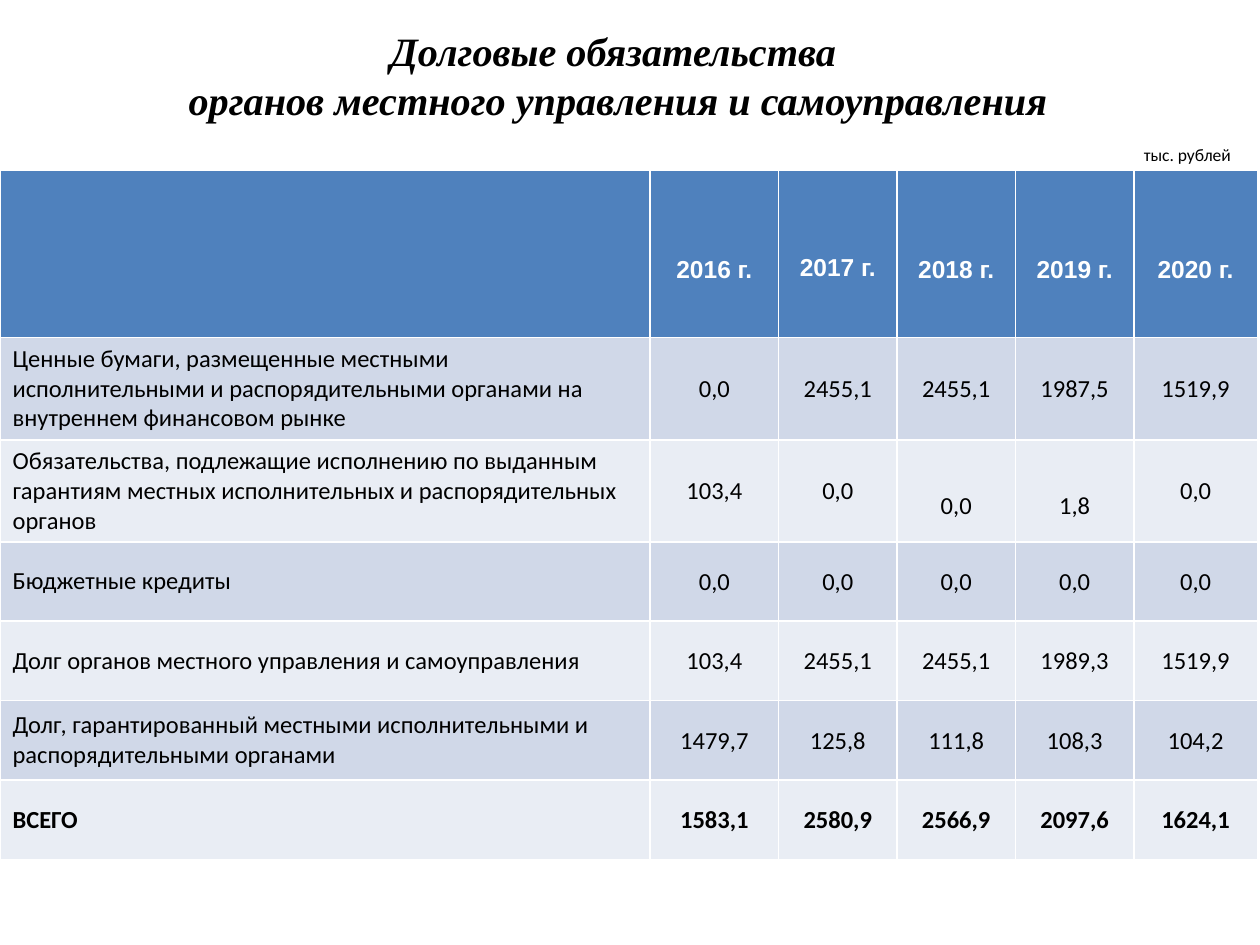
from pptx import Presentation
from pptx.dml.color import RGBColor
from pptx.enum.text import MSO_ANCHOR, PP_ALIGN
from pptx.util import Inches, Pt

BLACK, WHITE = "000000", "FFFFFF"
HEADER_FILL = "4F81BD"
BAND_FILLS = ("D0D8E8", "E9EDF4")

YEARS = ["2016 г.", "2017 г.", "2018 г.", "2019 г.", "2020 г."]
DEBT_ROWS = [
    ["Ценные бумаги, размещенные местными исполнительными и распорядительными "
     "органами на внутреннем финансовом рынке",
     "0,0", "2455,1", "2455,1", "1987,5", "1519,9"],
    ["Обязательства, подлежащие исполнению по выданным гарантиям местных "
     "исполнительных и распорядительных органов",
     "103,4", "0,0", "0,0", "1,8", "0,0"],
    ["Бюджетные кредиты", "0,0", "0,0", "0,0", "0,0", "0,0"],
    ["Долг органов местного управления и самоуправления",
     "103,4", "2455,1", "2455,1", "1989,3", "1519,9"],
    ["Долг, гарантированный местными исполнительными и распорядительными органами",
     "1479,7", "125,8", "111,8", "108,3", "104,2"],
    ["ВСЕГО", "1583,1", "2580,9", "2566,9", "2097,6", "1624,1"],
]
COLUMN_WIDTHS = [5.16, 1.02, 0.94, 0.94, 0.94, 0.98]
ROW_HEIGHTS = [1.33, 0.8, 0.8, 0.63, 0.63, 0.63, 0.63]

# Top margins that push single values below the middle of their cells
LOWERED_CELLS = {(0, column): 0.3 for column in range(1, 6)}
LOWERED_CELLS.update({(0, 2): 0.27, (2, 3): 0.29, (2, 4): 0.29})


def color(value):
    return RGBColor.from_string(value)


class DebtSlide:
    body_font = "Calibri"
    header_font = "Arial"
    title_font = "Times New Roman"
    table_size = 14

    def __init__(self, presentation):
        self.slide = presentation.slides.add_slide(presentation.slide_layouts[6])

    def style(self, paragraph, name, size, text_color=BLACK, bold=False,
              italic=False, align=PP_ALIGN.LEFT):
        paragraph.alignment = align
        font = paragraph.font
        font.name, font.size = name, Pt(size)
        font.bold, font.italic = bold, italic
        font.color.rgb = color(text_color)

    def text(self, text, left, top, width, height, name, size,
             anchor=MSO_ANCHOR.TOP, wrap=True, **font_style):
        box = self.slide.shapes.add_textbox(
            Inches(left), Inches(top), Inches(width), Inches(height))
        frame = box.text_frame
        frame.word_wrap = wrap
        frame.vertical_anchor = anchor
        frame.text = text
        self.style(frame.paragraphs[0], name, size, **font_style)

    def cell(self, cell, text, row, column):
        is_header = row == 0
        cell.fill.solid()
        cell.fill.fore_color.rgb = color(
            HEADER_FILL if is_header else BAND_FILLS[(row - 1) % 2])
        cell.vertical_anchor = MSO_ANCHOR.MIDDLE
        if (row, column) in LOWERED_CELLS:
            cell.margin_top = Inches(LOWERED_CELLS[row, column])
        elif row > 2 and column > 0:
            cell.margin_left = cell.margin_right = cell.margin_top = Inches(0.01)
            cell.margin_bottom = 0
        cell.text = text
        self.style(
            cell.text_frame.paragraphs[0],
            self.header_font if is_header else self.body_font,
            self.table_size,
            text_color=WHITE if is_header else BLACK,
            bold=is_header or row == len(DEBT_ROWS),
            align=PP_ALIGN.CENTER if column else PP_ALIGN.LEFT)

    def table(self, rows, left, top):
        table = self.slide.shapes.add_table(
            len(rows), len(COLUMN_WIDTHS), Inches(left), Inches(top),
            Inches(sum(COLUMN_WIDTHS)), Inches(sum(ROW_HEIGHTS))).table
        for column, width in zip(table.columns, COLUMN_WIDTHS):
            column.width = Inches(width)
        for row, height in zip(table.rows, ROW_HEIGHTS):
            row.height = Inches(height)
        for row, values in enumerate(rows):
            for column, value in enumerate(values):
                self.cell(table.cell(row, column), value, row, column)


def main():
    presentation = Presentation()
    presentation.slide_width = Inches(10)
    presentation.slide_height = Inches(7.5)
    slide = DebtSlide(presentation)
    slide.table([[""] + YEARS] + DEBT_ROWS, 0, 1.35)
    slide.text("Долговые обязательства \vорганов местного управления и самоуправления",
               0.41, -0.03, 9, 1.25, slide.title_font, 23,
               anchor=MSO_ANCHOR.MIDDLE, bold=True, italic=True,
               align=PP_ALIGN.CENTER)
    slide.text("тыс. рублей", 8.98, 1.09, 0.9, 0.27, slide.body_font, 10, wrap=False)
    presentation.save("out.pptx")


if __name__ == "__main__":
    main()
